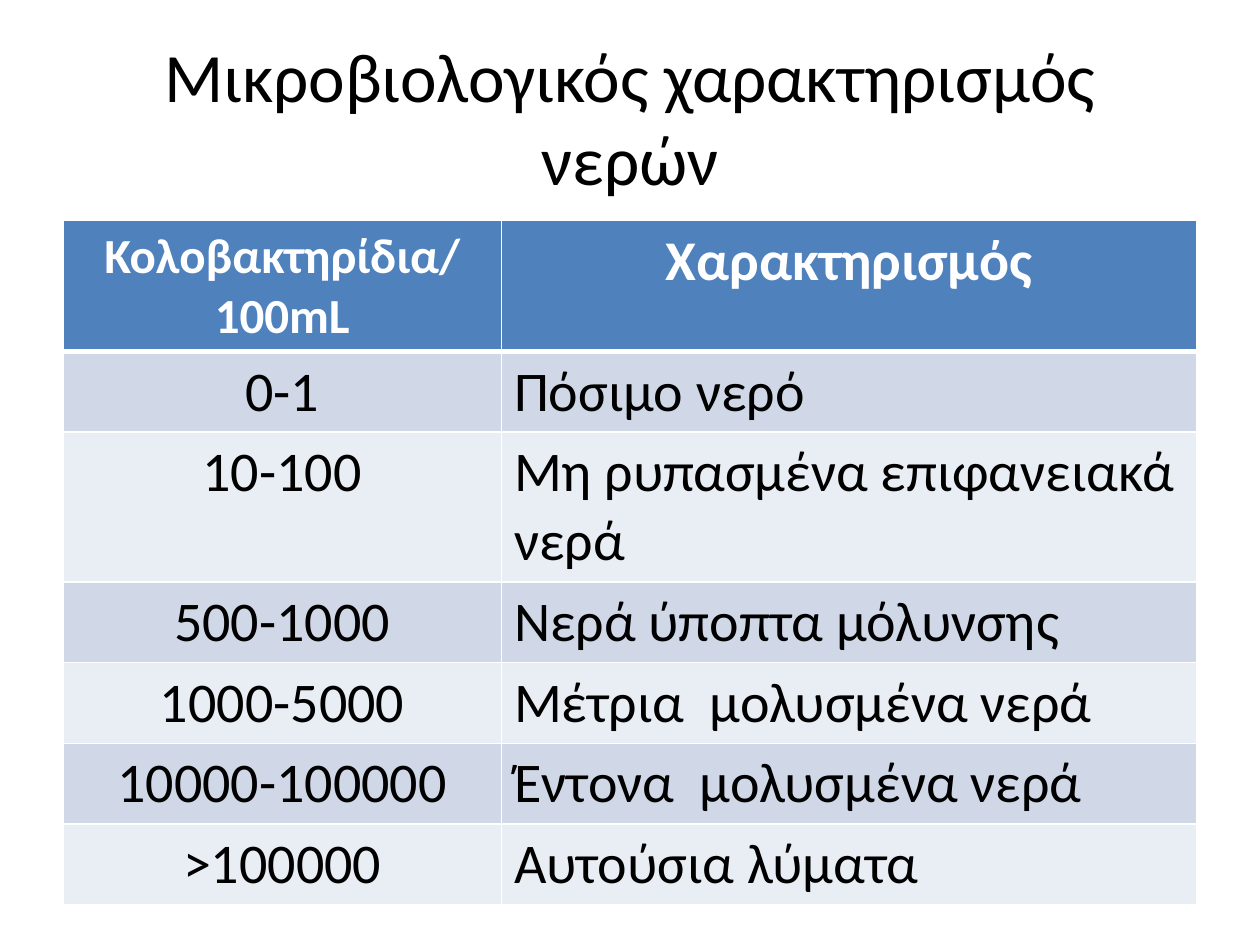
from lxml import etree
from pptx import Presentation
from pptx.dml.color import RGBColor
from pptx.enum import text
from pptx.oxml import ns
from pptx.util import Inches, Pt

TITLE = "Μικροβιολογικός χαρακτηρισμός νερών"
HEAD = ("Κολοβακτηρίδια/\n100mL", "Χαρακτηρισμός")
WATERS = [
    ("0-1", "Πόσιμο νερό"),
    ("10-100", "Μη ρυπασμένα επιφανειακά νερά"),
    ("500-1000", "Νερά ύποπτα μόλυνσης"),
    ("1000-5000", "Μέτρια  μολυσμένα νερά"),
    ("10000-100000", "Έντονα  μολυσμένα νερά"),
    (">100000", "Αυτούσια λύματα"),
]
WIDTHS = (3.48, 5.52)
HEIGHTS = (1.04, 0.64, 1.19, 0.64, 0.64, 0.64, 0.64)
BLUE, BANDS = "4F81BD", ("E9EDF4", "D0D8E8")
WHITE, BLACK = "FFFFFF", "000000"
CENTER, LEFT = text.PP_ALIGN.CENTER, text.PP_ALIGN.LEFT


def color(code):
    return RGBColor.from_string(code)


def style(frame, size, ink, align, bold=False):
    for para in frame.paragraphs:
        para.alignment = align
        font = para.font
        font.name, font.size, font.bold = "Calibri", Pt(size), bold
        font.color.rgb = color(ink)


def border(cell, head, below):
    props = cell._tc.get_or_add_tcPr()
    for side in "LRTB":
        thick = (head and side == "B") or (below and side == "T")
        line = etree.SubElement(props, ns.qn("a:ln" + side), w=str(Pt(3 if thick else 1)))
        fill = etree.SubElement(line, ns.qn("a:solidFill"))
        etree.SubElement(fill, ns.qn("a:srgbClr"), val=WHITE)


def main():
    deck = Presentation()
    deck.slide_width, deck.slide_height = Inches(10), Inches(7.5)
    slide = deck.slides.add_slide(deck.slide_layouts[6])

    box = slide.shapes.add_textbox(Inches(0.5), Inches(0.3), Inches(9), Inches(1.25))
    frame = box.text_frame
    frame.word_wrap = True
    frame.vertical_anchor = text.MSO_ANCHOR.MIDDLE
    frame.text = TITLE
    style(frame, 39.6, BLACK, CENTER)

    rows = [HEAD] + WATERS
    table = slide.shapes.add_table(
        len(rows), len(WIDTHS), Inches(0.5), Inches(1.75),
        Inches(sum(WIDTHS)), Inches(sum(HEIGHTS))).table
    for col, width in zip(table.columns, WIDTHS):
        col.width = Inches(width)
    for r, (row, height) in enumerate(zip(rows, HEIGHTS)):
        table.rows[r].height = Inches(height)
        head = r == 0
        for c, words in enumerate(row):
            cell = table.cell(r, c)
            cell.text = words
            border(cell, head, r == 1)
            cell.fill.solid()
            cell.fill.fore_color.rgb = color(BLUE if head else BANDS[r % 2])
            style(cell.text_frame, 28 if head and c == 0 else 32,
                  WHITE if head else BLACK,
                  CENTER if head or c == 0 else LEFT, head)

    deck.save("out.pptx")


if __name__ == "__main__":
    main()
